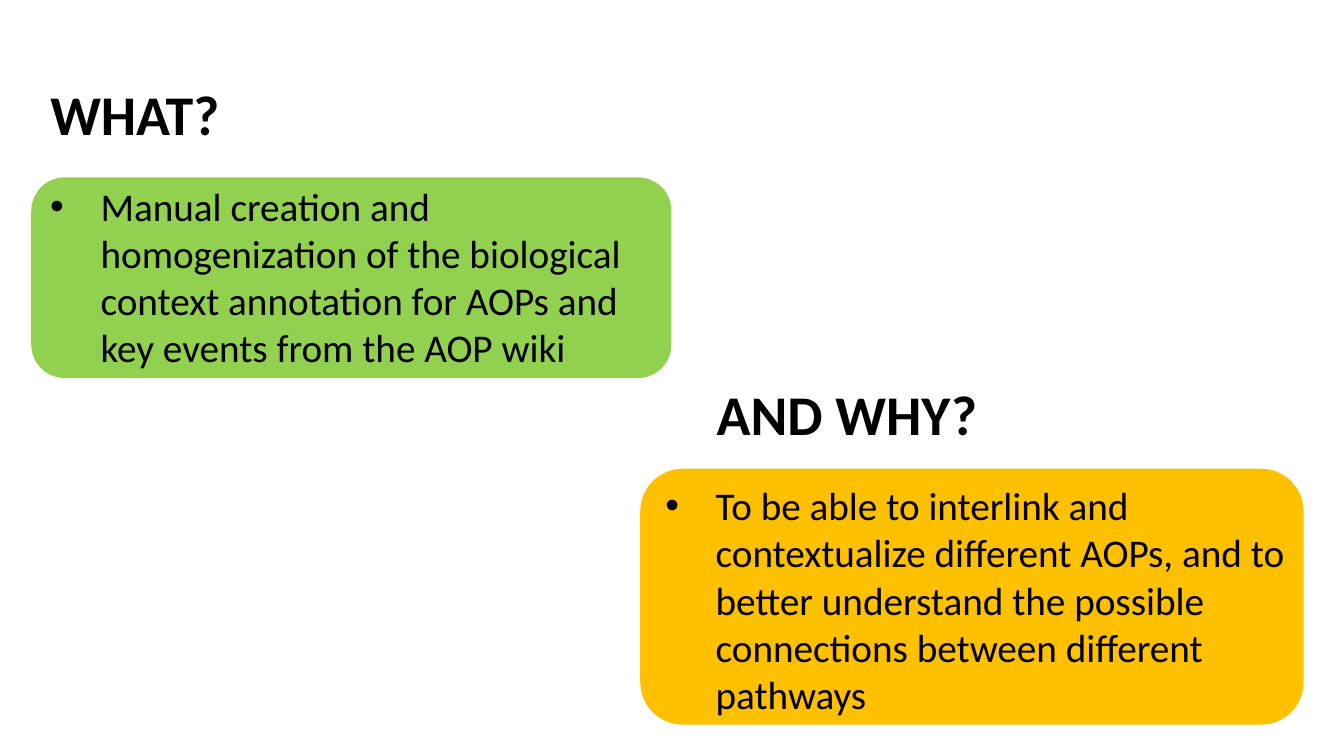
from pptx import Presentation
from pptx import util as u
from pptx.dml.color import RGBColor
from pptx.enum import shapes, text
from pptx.oxml.ns import qn
from lxml import etree


def rgb(value):
    return RGBColor.from_string(value)


class Deck:
    font = "Calibri"
    ink = "000000"
    heading_size = 40
    body_size = 28
    indent = 0.5

    def __init__(self, width, height):
        self.prs = Presentation()
        self.prs.slide_width = u.Inches(width)
        self.prs.slide_height = u.Inches(height)
        self.s = self.prs.slides.add_slide(self.prs.slide_layouts[6])

    def panel(self, box, color):
        sp = self.s.shapes.add_shape(
            shapes.MSO_SHAPE.ROUNDED_RECTANGLE, *map(u.Inches, box))
        sp.shadow.inherit = False
        sp.fill.solid()
        sp.fill.fore_color.rgb = rgb(color)
        sp.line.fill.background()

    def text(self, box, words, size, bold=False):
        sp = self.s.shapes.add_textbox(*map(u.Inches, box))
        tf = sp.text_frame
        tf.word_wrap = True
        tf.auto_size = text.MSO_AUTO_SIZE.SHAPE_TO_FIT_TEXT
        p = tf.paragraphs[0]
        r = p.add_run()
        r.text = words
        r.font.name = self.font
        r.font.size = u.Pt(size)
        r.font.bold = bold
        r.font.color.rgb = rgb(self.ink)
        return p

    def heading(self, box, words):
        self.text(box, words, self.heading_size, bold=True)

    def bullet(self, box, words):
        p = self.text(box, words, self.body_size)
        pPr = p._p.get_or_add_pPr()
        pPr.set("marL", str(u.Inches(self.indent)))
        pPr.set("indent", str(-u.Inches(self.indent)))
        etree.SubElement(pPr, qn("a:buFont"), typeface="Arial")
        etree.SubElement(pPr, qn("a:buChar"), char="•")


def main():
    deck = Deck(13.33, 7.5)
    deck.panel((6.35, 4.65, 6.58, 2.54), "FFC000")
    deck.panel((0.31, 1.76, 6.35, 1.99), "92D050")
    deck.heading((0.4, 0.74, 7.58, 0.77), "WHAT?")
    deck.bullet((0.4, 1.76, 6.27, 1.99),
                "Manual creation and homogenization of the biological context "
                "annotation for AOPs and key events from the AOP wiki")
    deck.bullet((6.5, 4.73, 6.67, 2.46),
                "To be able to interlink and contextualize different AOPs, and to "
                "better understand the possible connections between different pathways")
    deck.heading((7.01, 3.72, 6.67, 0.77), "AND WHY?")
    deck.prs.save("out.pptx")


if __name__ == "__main__":
    main()
